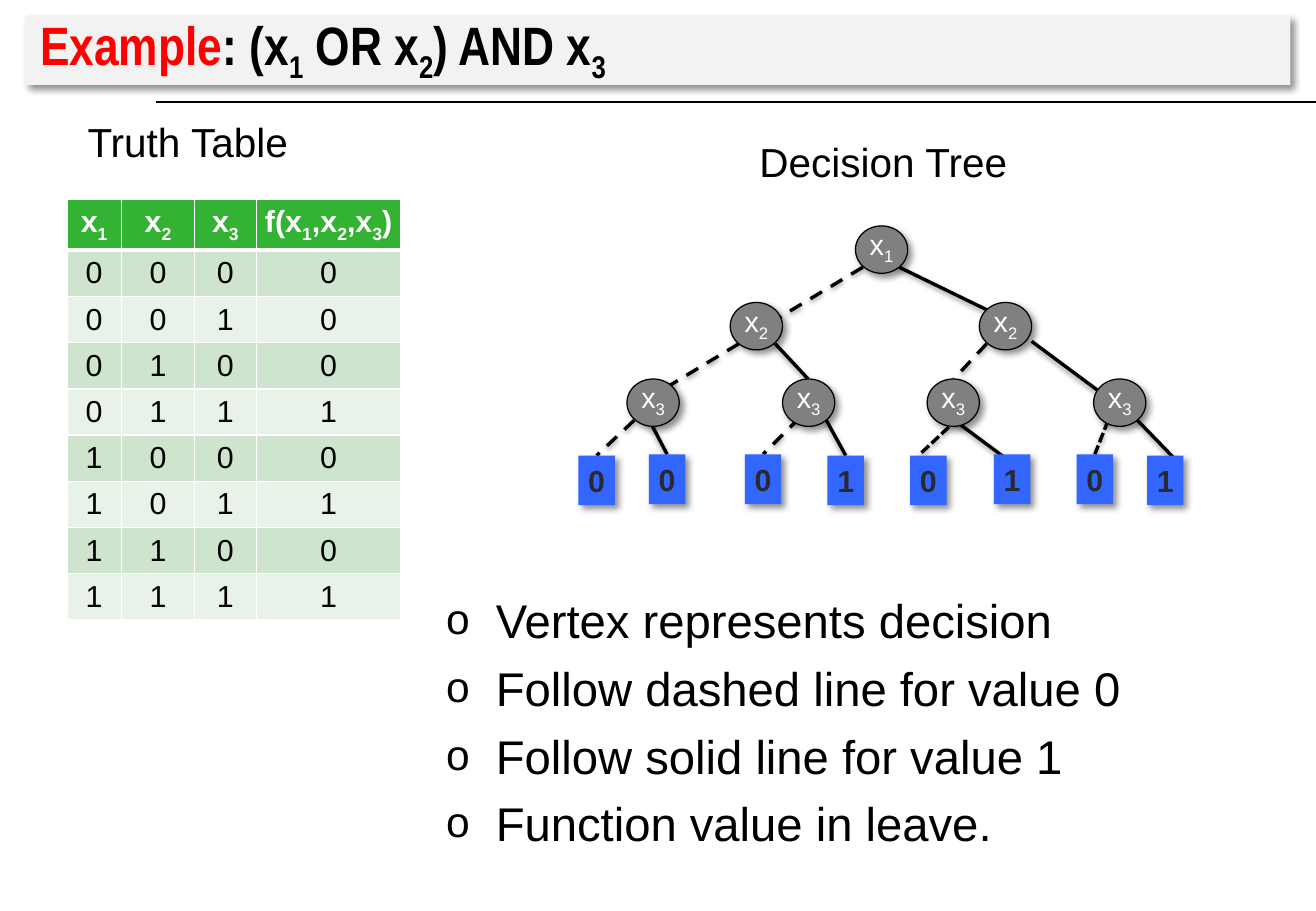
from lxml import etree
from pptx import Presentation
from pptx import util as u
from pptx.dml.color import RGBColor
from pptx.enum import dml, shapes, text
from pptx.oxml import parse_xml
from pptx.oxml.ns import nsdecls, qn

# An underscore sets the next character as a subscript.
TITLE = [("Example", "FF0000"), (": (x_1 OR x_2) AND x_3", "000000")]
CAPTIONS = [("Truth Table", 0.65, 0.99, 1.81), ("Decision Tree", 6.18, 1.15, 2.2)]
BULLETS = [
    "Vertex represents decision",
    "Follow dashed line for value 0",
    "Follow solid line for value 1",
    "Function value in leave.",
]
HEADER = ["x_1", "x_2", "x_3", "f(x_1,x_2,x_3)"]
INPUTS = [(a, b, c) for a in (0, 1) for b in (0, 1) for c in (0, 1)]
TRUTH = [(a, b, c, (a | b) & c) for a, b, c in INPUTS]
COLUMN_WIDTHS = [0.45, 0.6, 0.51, 1.19]

LEVELS = [  # label, top, left edges
    ("x_1", 1.86, [7.04]),
    ("x_2", 2.49, [6.01, 8.06]),
    ("x_3", 3.12, [5.16, 6.44, 7.63, 9.0]),
]
LEAVES = [(4.76, 3.75), (5.34, 3.74), (6.13, 3.74), (6.81, 3.75),
          (7.49, 3.75), (8.18, 3.74), (8.86, 3.74), (9.44, 3.75)]
SOLID, DASH, SHORT_DASH = None, dml.MSO_LINE.DASH, dml.MSO_LINE.SQUARE_DOT
BRANCHES = [  # start, end, dash
    ((7.1, 2.2), (6.27, 2.7), DASH),
    ((7.4, 2.2), (8.12, 2.55), SOLID),
    ((6.08, 2.83), (5.5, 3.18), DASH),
    ((6.38, 2.83), (6.65, 3.12), SOLID),
    ((8.12, 2.83), (7.85, 3.12), DASH),
    ((8.49, 2.81), (9.15, 3.3), SOLID),
    ((5.22, 3.46), (4.91, 3.75), DASH),
    ((5.37, 3.51), (5.49, 3.74), SOLID),
    ((6.58, 3.44), (6.28, 3.74), DASH),
    ((6.8, 3.46), (6.96, 3.75), SOLID),
    ((7.89, 3.44), (7.58, 3.73), SHORT_DASH),
    ((7.72, 3.36), (8.38, 3.85), SOLID),
    ((9.12, 3.46), (9.01, 3.74), SHORT_DASH),
    ((9.36, 3.46), (9.66, 3.77), SOLID),
]
LEAF_W, LEAF_H = 0.3, 0.41
NODE_SHADOW = dict(opacity=43, blur=4, distance=3, angle=45)
LINE_SHADOW = dict(opacity=38, blur=3.1, distance=1.6, angle=90)


def color(value):
    return RGBColor.from_string(value)


def inches(*values):
    return [u.Inches(value) for value in values]


def write(para, content, size=18, tone="000000", bold=False, font="Arial", align=None):
    """Add text to a paragraph, with subscripts after underscores."""
    para.alignment = align
    first, *rest = content.split("_")
    pieces = [(first, False)]
    for part in rest:
        pieces += [(part[0], True), (part[1:], False)]
    for piece, lowered in pieces:
        if not piece:
            continue
        span = para.add_run()
        span.text = piece
        span.font.size, span.font.bold, span.font.name = u.Pt(size), bold, font
        span.font.color.rgb = color(tone)
        if lowered:
            span.font._element.set("baseline", "-25000")


def set_frame(frame, margins, anchor=text.MSO_ANCHOR.TOP, wrap=True):
    (frame.margin_left, frame.margin_top,
     frame.margin_right, frame.margin_bottom) = inches(*margins)
    frame.vertical_anchor, frame.word_wrap = anchor, wrap
    frame.auto_size = text.MSO_AUTO_SIZE.NONE


def place(shape, *bounds):
    shape.left, shape.top, shape.width, shape.height = inches(*bounds)


def fill(target, tone):
    target.fill.solid()
    target.fill.fore_color.rgb = color(tone)


def add_shadow(shape, opacity, blur, distance, angle):
    shape._element.spPr.append(parse_xml(
        f'<a:effectLst {nsdecls("a")}><a:outerShdw blurRad="{u.Pt(blur)}" '
        f'dist="{u.Pt(distance)}" dir="{angle * 60000}" algn="ctr" rotWithShape="0">'
        f'<a:srgbClr val="000000"><a:alpha val="{opacity * 1000}"/></a:srgbClr>'
        '</a:outerShdw></a:effectLst>'))


def add_line(start, end, width):
    line = slide.shapes.add_connector(
        shapes.MSO_CONNECTOR.STRAIGHT, *inches(*start, *end))
    line.line.color.rgb, line.line.width = color("000000"), u.Pt(width)
    return line


def add_tree_shape(kind, bounds, fill_tone, label, margins, **style):
    shape = slide.shapes.add_shape(kind, *inches(*bounds))
    fill(shape, fill_tone)
    if kind == shapes.MSO_SHAPE.OVAL:
        shape.line.color.rgb, shape.line.width = color("000000"), u.Pt(0.75)
    else:
        shape.line.fill.background()
    add_shadow(shape, **NODE_SHADOW)
    set_frame(shape.text_frame, margins, text.MSO_ANCHOR.MIDDLE, wrap=False)
    write(shape.text_frame.paragraphs[0], label, align=text.PP_ALIGN.CENTER, **style)
    return shape


def set_borders(cell, top, bottom):
    properties = cell._tc.get_or_add_tcPr()
    for index, (side, width) in enumerate(
            [("L", 1), ("R", 1), ("T", top), ("B", bottom)]):
        properties.insert(index, parse_xml(
            f'<a:ln{side} {nsdecls("a")} w="{u.Pt(width)}"><a:solidFill>'
            f'<a:srgbClr val="FFFFFF"/></a:solidFill></a:ln{side}>'))


def add_bullet(para):
    properties = para._p.get_or_add_pPr()
    properties.set("marL", str(u.Inches(0.69)))
    properties.set("indent", str(u.Inches(-0.41)))
    for tag, name, value in [("a:buSzPct", "val", "90000"),
                             ("a:buFont", "typeface", "Arial"),
                             ("a:buChar", "char", "o")]:
        etree.SubElement(properties, qn(tag)).set(name, value)


deck = Presentation()
deck.slide_width, deck.slide_height = inches(10.83, 7.5)
slide = deck.slides.add_slide(deck.slide_layouts[1])

title, body = slide.placeholders
place(title, 0.21, 0.13, 10.41, 0.57)
fill(title, "F2F2F2")
add_shadow(title, **NODE_SHADOW)
set_frame(title.text_frame, (0.12, 0.05, 0.1, 0), text.MSO_ANCHOR.BOTTOM)
for content, tone in TITLE:
    write(title.text_frame.paragraphs[0], content, size=32, tone=tone, bold=True,
          font="Arial Narrow", align=text.PP_ALIGN.LEFT)

rule = add_line((1.28, 0.84), (10.83, 0.84), 1)
etree.SubElement(rule._element.spPr, qn("a:effectLst"))

place(body, 3.29, 4.82, 7.5, 2.47)
set_frame(body.text_frame, (0.1, 0.05, 0.1, 0.05))
for index, content in enumerate(BULLETS):
    para = body.text_frame.add_paragraph() if index else body.text_frame.paragraphs[0]
    para.level = 1
    para.space_before = u.Pt(6.5 if index else 0)
    add_bullet(para)
    write(para, content, size=28)

for content, left, top, width in CAPTIONS:
    box = slide.shapes.add_textbox(*inches(left, top, width, 0.42))
    set_frame(box.text_frame, (0.07, 0.03, 0.07, 0.03), wrap=False)
    box.text_frame.paragraphs[0].line_spacing = 0.87
    write(box.text_frame.paragraphs[0], content, size=24)

rows = [HEADER] + TRUTH
table = slide.shapes.add_table(
    len(rows), len(HEADER), *inches(0.55, 1.64, sum(COLUMN_WIDTHS), 3.45)).table
for column, width in zip(table.columns, COLUMN_WIDTHS):
    column.width = u.Inches(width)
for r, values in enumerate(rows):
    table.rows[r].height = u.Inches(0.38 if r else 0.41)
    for c, value in enumerate(values):
        cell = table.cell(r, c)
        side = 0.11 if r else 0
        cell.margin_left = cell.margin_right = u.Inches(side)
        fill(cell, "34B233" if r == 0 else "CEE4CE" if r % 2 else "E8F2E8")
        set_borders(cell, top=3 if r == 1 else 1, bottom=1 if r else 3)
        write(cell.text_frame.paragraphs[0], str(value), bold=r == 0,
              tone="000000" if r else "FFFFFF", align=text.PP_ALIGN.CENTER)

for label, top, lefts in LEVELS:
    for left in lefts:
        add_tree_shape(shapes.MSO_SHAPE.OVAL, (left, top, 0.43, 0.39), "808080",
                       label, (0.04, 0, 0.04, 0.05), size=17, tone="FFFFFF")
leaf_tops = {}
for (left, top), (*_, result) in zip(LEAVES, TRUTH):
    leaf = add_tree_shape(shapes.MSO_SHAPE.RECTANGLE, (left, top, LEAF_W, LEAF_H),
                          "3366FF", str(result), (0.08, 0.05, 0.08, 0.05),
                          tone="292A31", bold=True)
    leaf_tops[round(left + LEAF_W / 2, 2), top] = leaf

for start, end, dash in BRANCHES:
    branch = add_line(start, end, 2)
    if dash:
        branch.line.dash_style = dash
    add_shadow(branch, **LINE_SHADOW)
    if end in leaf_tops:
        branch.end_connect(leaf_tops[end], 0)
    slide.shapes._spTree.insert(2, branch._element)  # behind the vertices

deck.save("out.pptx")
